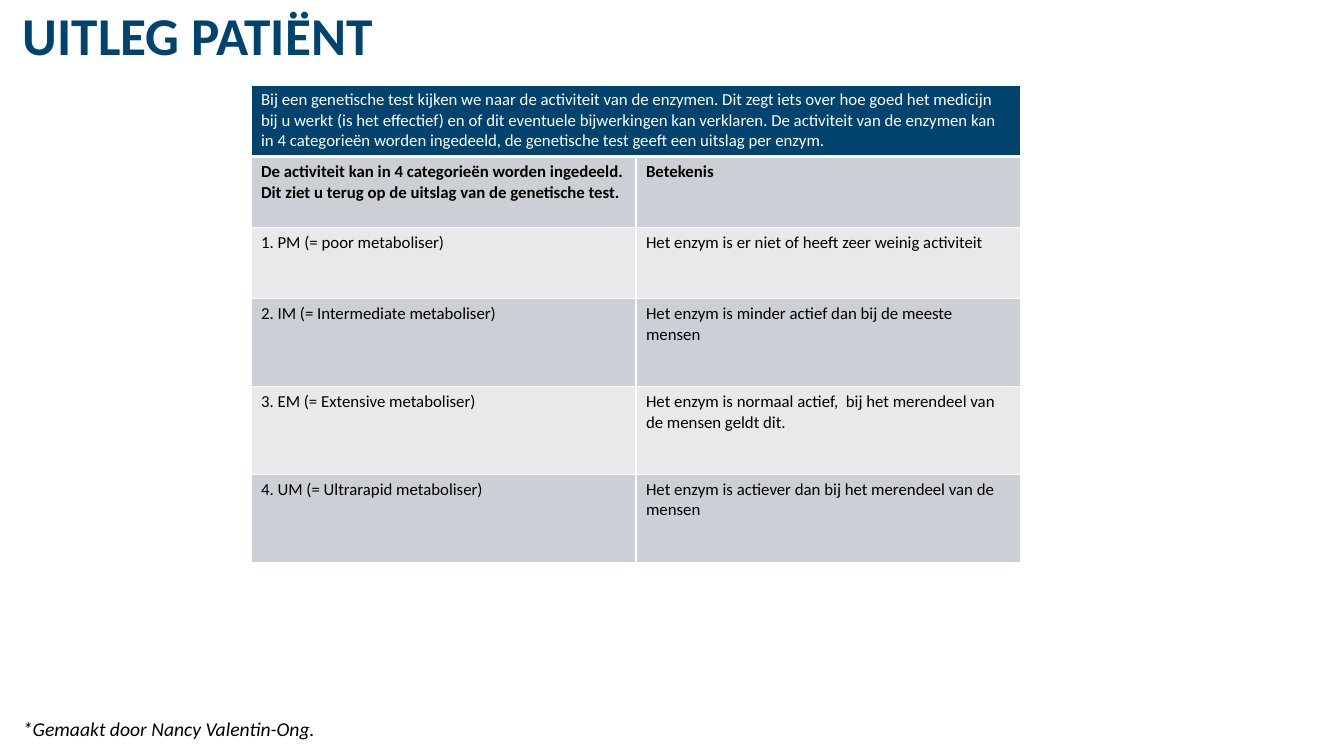
"""Build the patient explanation slide with a table of enzyme activity categories."""
from lxml.etree import SubElement
from pptx import Presentation
from pptx.dml.color import RGBColor
from pptx.oxml.ns import qn
from pptx.util import Emu, Pt

TITLE = "UITLEG PATIËNT"
FOOTNOTE = "*Gemaakt door Nancy Valentin-Ong."
INTRO = (
    "Bij een genetische test kijken we naar de activiteit van de enzymen. "
    "Dit zegt iets over hoe goed het medicijn bij u werkt (is het effectief) "
    "en of dit eventuele bijwerkingen kan verklaren. De activiteit van de enzymen "
    "kan in 4 categorieën worden ingedeeld, de genetische test geeft een uitslag per enzym."
)
ROWS = [
    (INTRO, ""),
    ("De activiteit kan in 4 categorieën worden ingedeeld. "
     "Dit ziet u terug op de uitslag van de genetische test.", "Betekenis"),
    ("1. PM (= poor metaboliser)", "Het enzym is er niet of heeft zeer weinig activiteit"),
    ("2. IM (= Intermediate metaboliser)", "Het enzym is minder actief dan bij de meeste mensen"),
    ("3. EM (= Extensive metaboliser)",
     "Het enzym is normaal actief,  bij het merendeel van de mensen geldt dit."),
    ("4. UM (= Ultrarapid metaboliser)",
     "Het enzym is actiever dan bij het merendeel van de mensen"),
]
COLORS = {"navy": "00436F", "dark": "CCCFD5", "light": "E7E9EB",
          "white": "FFFFFF", "black": "000000"}
ROW_HEIGHTS = [71, 71, 71, 88, 88, 88]
COLUMN_WIDTH = 385
FONT = "Calibri"


def px(length):
    return Emu(round(length * 914400 / 100.8))


def style(para, size, color, bold=False, italic=False):
    font = para.font
    font.name, font.size, font.bold, font.italic = FONT, Pt(size), bold, italic
    font.color.rgb = RGBColor.from_string(COLORS[color])


def add_text(page, text, left, top, width, height, **look):
    box = page.shapes.add_textbox(px(left), px(top), px(width), px(height))
    box.text_frame.word_wrap = True
    para = box.text_frame.paragraphs[0]
    para.text = text
    style(para, **look)


def add_borders(cell, bottom):
    properties = cell._tc.get_or_add_tcPr()
    for side, points in (("L", 1), ("R", 1), ("T", 1), ("B", bottom)):
        line = SubElement(properties, qn(f"a:ln{side}"), w=str(Pt(points)))
        fill = SubElement(line, qn("a:solidFill"))
        SubElement(fill, qn("a:srgbClr"), val=COLORS["white"])


def add_categories(page):
    frame = page.shapes.add_table(len(ROWS), 2, px(251), px(85),
                                  px(2 * COLUMN_WIDTH), px(sum(ROW_HEIGHTS)))
    table = frame.table
    for column in table.columns:
        column.width = px(COLUMN_WIDTH)
    table.cell(0, 0).merge(table.cell(0, 1))
    for index, texts in enumerate(ROWS):
        table.rows[index].height = px(ROW_HEIGHTS[index])
        header = index == 0
        fill = "navy" if header else ("light", "dark")[index % 2]
        for position, text in enumerate(texts):
            cell = table.cell(index, position)
            add_borders(cell, 3 if header else 1)
            cell.fill.solid()
            cell.fill.fore_color.rgb = RGBColor.from_string(COLORS[fill])
            para = cell.text_frame.paragraphs[0]
            para.text = text
            style(para, 12, "white" if header else "black", bold=index == 1)


def main():
    deck = Presentation()
    deck.slide_width, deck.slide_height = px(1344), px(756)
    page = deck.slides.add_slide(deck.slide_layouts[6])
    add_categories(page)
    add_text(page, TITLE, 13, -3, 1277, 65, size=38, color="navy", bold=True)
    add_text(page, FOOTNOTE, 13, 712, 372, 65, size=14, color="black", italic=True)
    deck.save("out.pptx")


if __name__ == "__main__":
    main()
